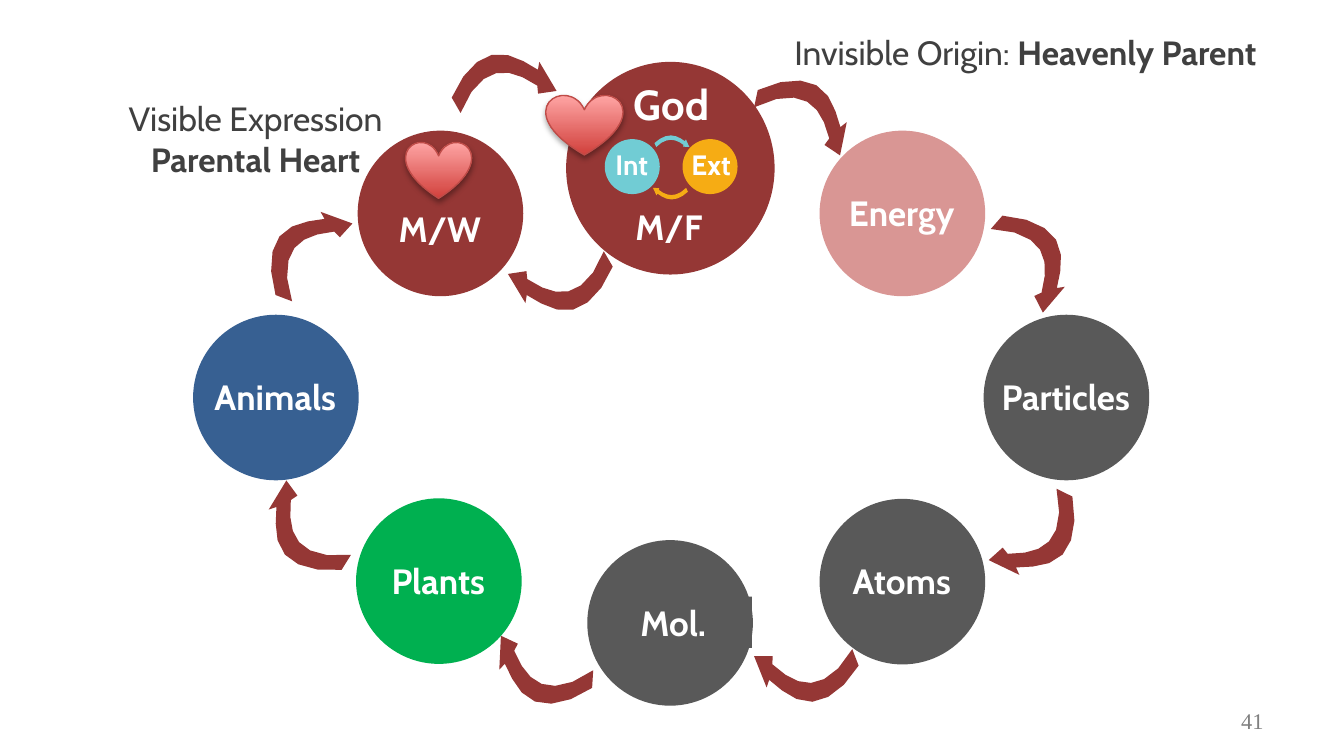
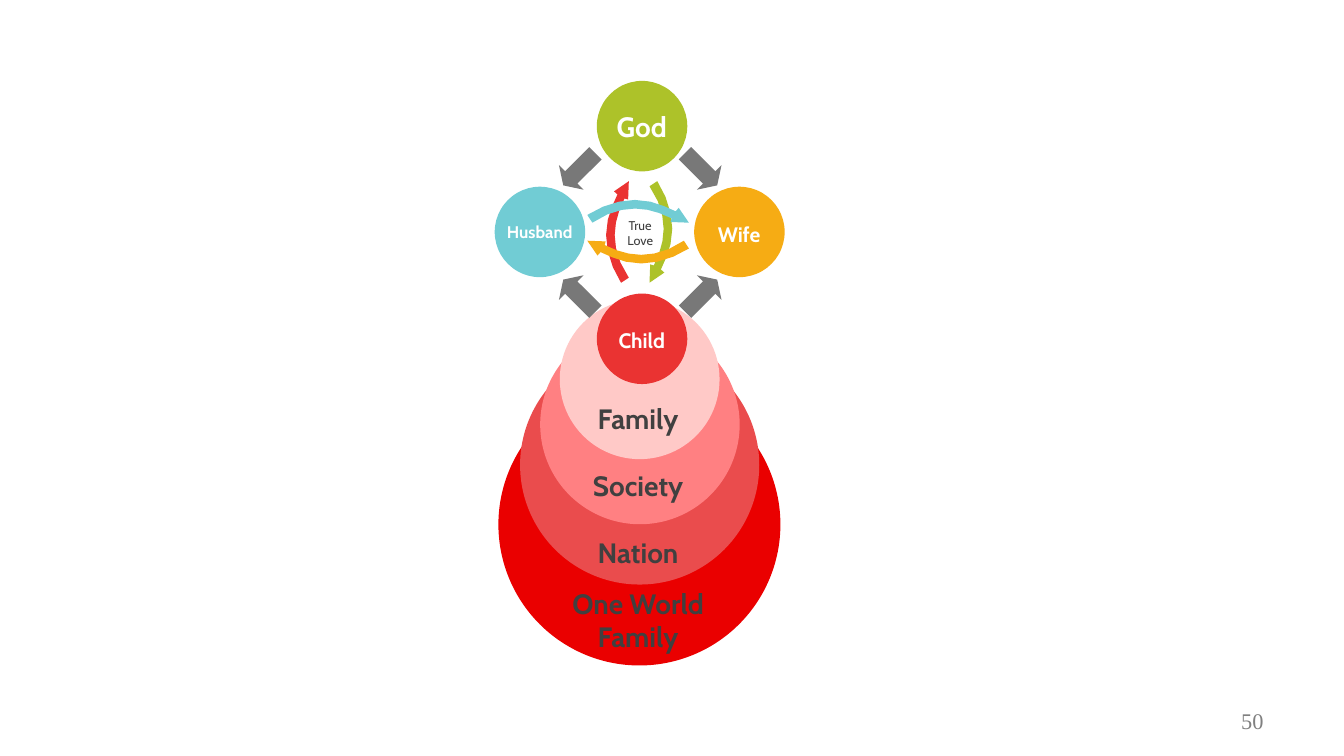
"""Build two slides: a circle of creation and a family growing into one world."""
import copy

import lxml.etree
import pptx
import pptx.dml.color
import pptx.enum.shapes
import pptx.enum.text
import pptx.oxml.ns
import pptx.util

RGB = pptx.dml.color.RGBColor
SHAPE = pptx.enum.shapes.MSO_SHAPE
ALIGN = pptx.enum.text.PP_ALIGN
ANCHOR = pptx.enum.text.MSO_ANCHOR
qn = pptx.oxml.ns.qn

WHITE = RGB(0xFF, 0xFF, 0xFF)
INK = RGB(0x40, 0x40, 0x40)
MUTED = RGB(0x80, 0x80, 0x80)
MAROON = RGB(0x95, 0x37, 0x35)
ROSE = RGB(0xD9, 0x96, 0x94)
SLATE = RGB(0x59, 0x59, 0x59)
PLANT = RGB(0x00, 0xB0, 0x50)
NAVY = RGB(0x37, 0x60, 0x92)
TEAL = RGB(0x71, 0xCC, 0xD4)
AMBER = RGB(0xF6, 0xAC, 0x14)
LIME = RGB(0xAD, 0xC2, 0x29)
RED = RGB(0xEA, 0x33, 0x32)
STEEL = RGB(0x78, 0x78, 0x78)
HEART_LOW = RGB(0xD1, 0x40, 0x3C)
HEART_TOP = RGB(0xFF, 0xA6, 0xA5)
HEART_RIM = RGB(0xBF, 0x4C, 0x48)
RINGS = [
    (9.42, 7.25, 5.33, RGB(0xEA, 0x00, 0x00)),
    (9.83, 6.53, 4.52, RGB(0xEA, 0x4C, 0x4D)),
    (10.21, 6.14, 3.77, RGB(0xFF, 0x80, 0x82)),
    (10.58, 5.66, 3.02, RGB(0xFF, 0xC9, 0xC7)),
]

TITLE = {"name": "Cabin", "bold": True}
PLAIN = {"name": "Cabin", "bold": False}
SERIF = {"name": "Times New Roman", "bold": False}

OUTER = [(0, 0.66), (0.15, 0.23), (0.32, 0), (0.47, 0), (0.63, 0), (0.76, 0.27), (0.87, 0.5)]
HEAD = [(0.9, 0.35), (1, 1), (0.82, 0.97)]
INNER = [(0.83, 0.81), (0.7, 0.53), (0.6, 0.39), (0.47, 0.38), (0.35, 0.38), (0.2, 0.54), (0.05, 1)]


def cm(*vals):
    """Turn centimetre numbers into lengths."""
    return [pptx.util.Cm(val) for val in vals]


def paint(shape, fill):
    """Give a shape a flat fill with no line or shadow."""
    shape.shadow.inherit = False
    shape.fill.solid()
    shape.fill.fore_color.rgb = fill
    shape.line.fill.background()


def style(run, size, color, face):
    """Apply font values to a run."""
    for key, val in {**face, "size": pptx.util.Pt(size)}.items():
        setattr(run.font, key, val)
    run.font.color.rgb = color


def label(slide, box, text, size, color=WHITE, face=TITLE, pad=(0.08, 0.08),
          align=ALIGN.CENTER, anchor=ANCHOR.TOP, after=0):
    """Add a text box and return it."""
    shape = slide.shapes.add_textbox(*cm(*box))
    frame = shape.text_frame
    side, edge = cm(*pad)
    form = {"word_wrap": True, "vertical_anchor": anchor, "margin_left": side,
            "margin_right": side, "margin_top": edge, "margin_bottom": edge}
    for key, val in form.items():
        setattr(frame, key, val)
    frame.text = text
    for para in frame.paragraphs:
        para.alignment = align
        para.space_after = pptx.util.Pt(after)
        for run in para.runs:
            style(run, size, color, face)
        for gap in para._p.findall(qn("a:br")):
            gap.insert(0, copy.deepcopy(para.runs[0]._r.rPr))
    return shape


def note(slide, box, text, strong):
    """Add a caption that ends in bold."""
    shape = label(slide, box, text, 18, INK, PLAIN, (0.18, 0.1), after=16.5)
    run = shape.text_frame.paragraphs[0].add_run()
    run.text = strong
    style(run, 18, INK, TITLE)


def number(slide, text):
    """Add the slide number."""
    label(slide, (18.21, 13.24, 5.92, 0.76), text, 12, MUTED, SERIF,
          (0.25, 0.13), ALIGN.RIGHT, ANCHOR.MIDDLE)


def disc(slide, left, top, wide, fill, high=None):
    """Add a filled ellipse, round unless a height is given."""
    box = cm(left, top, wide, high or wide)
    paint(slide.shapes.add_shape(SHAPE.OVAL, *box), fill)


def stage(slide, text, left, top, fill, drop=1.07):
    """Add one labelled circle of the cycle."""
    disc(slide, left, top, 3.13, fill)
    label(slide, (left + 0.02, top + drop, 3.07, 0.97), text, 18.8)


def curve(knots, steps=3):
    """List the points along joined cubic curves."""
    points = [knots[0]]
    for at in range(0, len(knots) - 1, 3):
        for step in range(1, steps + 1):
            t = step / steps
            mix = ((1 - t) ** 3, 3 * t * (1 - t) ** 2, 3 * t * t * (1 - t), t ** 3)
            points.append(tuple(sum(m * knot[axis] for m, knot in zip(mix, knots[at:at + 4]))
                                for axis in (0, 1)))
    return points


def swoosh(slide, box, turn, fill):
    """Add a curved arrow turned by some degrees."""
    left, top, wide, high = cm(*box)
    points = [(round(left + x * wide), round(top + y * high))
              for x, y in curve(OUTER) + HEAD + curve(INNER)]
    form = slide.shapes.build_freeform(*points[0])
    form.add_line_segments(points[1:], close=True)
    shape = form.convert_to_shape()
    shape.rotation = turn
    paint(shape, fill)


def block(slide, left, top, turn):
    """Add a short straight arrow."""
    shape = slide.shapes.add_shape(SHAPE.LEFT_ARROW, *cm(left, top, 0.86, 0.66))
    shape.adjustments[1] = 0.325
    shape.rotation = turn
    paint(shape, STEEL)


def heart(slide, *box):
    """Add a shaded heart with a soft shadow."""
    shape = slide.shapes.add_shape(SHAPE.HEART, *cm(*box))
    shape.fill.gradient()
    shape.fill.gradient_angle = 90
    for stop, color, place in zip(shape.fill.gradient_stops, (HEART_LOW, HEART_TOP), (0, 1)):
        stop.color.rgb = color
        stop.position = place
    shape.line.color.rgb = HEART_RIM
    shape.line.width = pptx.util.Pt(0.75)
    shape.shadow.inherit = False
    group = shape._element.spPr.find(qn("a:effectLst"))
    shade = lxml.etree.SubElement(group, qn("a:outerShdw"), blurRad="39370", dist="22860",
                                  dir="5400000", rotWithShape="0")
    tone = lxml.etree.SubElement(shade, qn("a:srgbClr"), val="000000")
    lxml.etree.SubElement(tone, qn("a:alpha"), val="35000")


def cycle(slide):
    """Draw the circle of creation."""
    disc(slide, 10.7, 1.17, 3.94, MAROON, 4.02)
    label(slide, (11.66, 1.38, 2.06, 1.17), "God", 22.5, pad=(0.18, 0.1))
    swoosh(slide, (12.34, 3.55, 0.66, 0.22), 180, AMBER)
    disc(slide, 11.43, 2.63, 1.04, TEAL)
    label(slide, (11.43, 2.71, 1.02, 0.79), "Int", 15)
    disc(slide, 12.9, 2.63, 1.04, AMBER)
    swoosh(slide, (12.37, 2.56, 0.66, 0.22), 0, TEAL)
    label(slide, (12.93, 2.71, 1.02, 0.79), "Ext", 15)

    stage(slide, "M/W", 6.76, 2.47, MAROON, 1.37)
    for text, left, top, fill in (
            ("Particles", 18.59, 5.95, SLATE), ("Atoms", 15.49, 9.43, SLATE)):
        stage(slide, text, left, top, fill)
    disc(slide, 11.1, 10.21, 3.13, SLATE)
    paint(label(slide, (11.24, 11.28, 2.97, 0.97), "Mol.", 18.8), SLATE)
    for text, left, top, fill in (
            ("Plants", 6.73, 9.42, PLANT), ("Animals", 3.65, 5.95, NAVY),
            ("Energy", 15.49, 2.47, ROSE)):
        stage(slide, text, left, top, fill)

    for left, top, turn in (
            (14.27, 1.58, 29.2), (18.61, 4.36, 58.1), (18.72, 9.73, 133.5),
            (14.28, 12.33, 176), (9.24, 12.33, 200.5), (4.72, 9.66, 229),
            (4.71, 4.24, 307.8), (9.68, 4.94, 166.7), (8.48, 1.01, 347.1)):
        swoosh(slide, (left, top, 1.96, 0.94), turn, MAROON)

    heart(slide, 7.67, 2.68, 1.24, 1.07)
    label(slide, (11.11, 3.81, 3.07, 0.97), "M/F", 18.8)
    note(slide, (14.2, 0.51, 10.36, 0.97), "Invisible Origin: ", "Heavenly Parent")
    note(slide, (1.64, 1.76, 6.38, 1.73), "Visible Expression\v", "Parental Heart")
    heart(slide, 10.32, 1.79, 1.45, 1.14)
    number(slide, "41")


def family(slide):
    """Draw the family and the rings that grow from it."""
    for ring in RINGS:
        disc(slide, *ring)
    rings = label(slide, (10.47, 7.27, 3.18, 5.23), "Family\nSociety\nNation\nOne World\vFamily",
                  15, INK, pad=(0.08, 0), after=9)
    for para in rings.text_frame.paragraphs[:-1]:
        para.line_spacing = 1.5

    for text, left, top, fill, size, drop in (
            ("God", 11.28, 1.53, LIME, 15, 0.46), ("Husband", 9.35, 3.53, TEAL, 9, 0.58),
            ("Wife", 13.12, 3.53, AMBER, 11.2, 0.58), ("Child", 11.28, 5.55, RED, 11.2, 0.57)):
        disc(slide, left, top, 1.71, fill)
        label(slide, (left, top + drop, 1.7, 0.7), text, size)
    for left, top, turn in ((10.52, 2.87, 315), (12.82, 2.87, 225),
                            (10.52, 5.26, 45), (12.82, 5.26, 135)):
        block(slide, left, top, turn)
    for left, top, turn, fill in ((10.71, 4.17, 270, RED), (11.53, 4.17, 90, LIME),
                                  (11.1, 3.78, 0, TEAL), (11.1, 4.55, 180, AMBER)):
        swoosh(slide, (left, top, 1.92, 0.43), turn, fill)
    label(slide, (11.63, 3.97, 0.94, 0.86), "True Love", 6.8, INK, PLAIN,
          (0.18, 0.1), anchor=ANCHOR.MIDDLE)
    number(slide, "50")


def main():
    """Build and save the deck."""
    deck = pptx.Presentation()
    deck.slide_width, deck.slide_height = cm(25.4, 14.29)
    for draw in (cycle, family):
        draw(deck.slides.add_slide(deck.slide_layouts[6]))
    deck.save("out.pptx")


if __name__ == "__main__":
    main()
